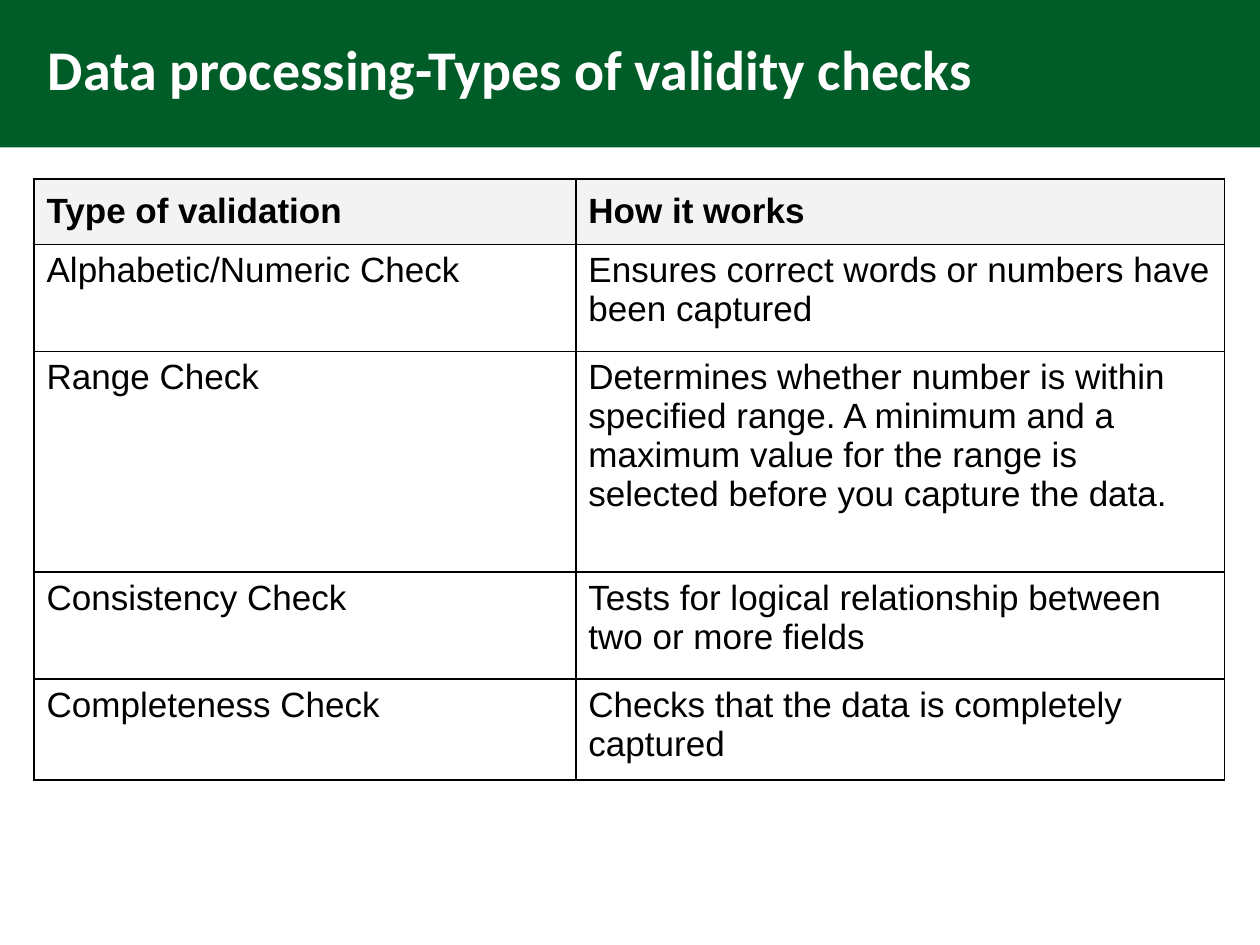
"""Build the slide on types of validity checks."""
import pptx
import pptx.dml.color
import pptx.enum.shapes
import pptx.enum.text
import pptx.oxml
import pptx.oxml.ns
import pptx.util

Inches = pptx.util.Inches
Pt = pptx.util.Pt
RGBColor = pptx.dml.color.RGBColor
Anchor = pptx.enum.text.MSO_ANCHOR

GREEN = RGBColor(0x00, 0x5D, 0x28)
GREY = RGBColor(0xF3, 0xF3, 0xF3)
BLACK = RGBColor(0x00, 0x00, 0x00)
WHITE = RGBColor(0xFF, 0xFF, 0xFF)

TITLE = "Data processing-Types of validity checks"
ROWS = [
    (0.52, "Type of validation", "How it works"),
    (0.85, "Alphabetic/Numeric Check",
     "Ensures correct words or numbers have been captured"),
    (1.75, "Range Check",
     "Determines whether number is within specified range. A minimum and a "
     "maximum value for the range is selected before you capture the data."),
    (0.85, "Consistency Check",
     "Tests for logical relationship between two or more fields"),
    (0.8, "Completeness Check", "Checks that the data is completely captured"),
]
COLUMN_WIDTHS = (4.3, 5.15)


def style_text(paragraph, name, size, color, bold):
    for span in paragraph.runs:
        span.font.name = name
        span.font.size = Pt(size)
        span.font.color.rgb = color
        span.font.bold = bold


def add_borders(cell):
    properties = cell._tc.get_or_add_tcPr()
    for index, side in enumerate(("lnL", "lnR", "lnT", "lnB")):
        border = pptx.oxml.parse_xml(
            f'<a:{side} {pptx.oxml.ns.nsdecls("a")} w="{Pt(1)}"><a:solidFill>'
            f'<a:srgbClr val="{BLACK}"/></a:solidFill></a:{side}>')
        properties.insert(index, border)


def add_heading(page):
    title = page.shapes.title
    title.left, title.top = Inches(0.28), Inches(0.09)
    title.width, title.height = Inches(8.53), Inches(0.77)
    frame = title.text_frame
    frame.text = TITLE
    frame.word_wrap = True
    frame.auto_size = pptx.enum.text.MSO_AUTO_SIZE.NONE
    frame.vertical_anchor = Anchor.BOTTOM
    paragraph = frame.paragraphs[0]
    paragraph.alignment = pptx.enum.text.PP_ALIGN.LEFT
    paragraph.line_spacing = 0.85
    style_text(paragraph, "Calibri", 32, WHITE, True)

    band = page.shapes.add_shape(
        pptx.enum.shapes.MSO_SHAPE.RECTANGLE, 0, 0, Inches(10), Inches(1.17))
    band.shadow.inherit = False
    band.fill.solid()
    band.fill.fore_color.rgb = GREEN
    band.line.fill.background()
    title.element.addprevious(band.element)


def add_checks_table(page):
    table = page.shapes.add_table(
        len(ROWS), len(COLUMN_WIDTHS), Inches(0.27), Inches(1.42),
        Inches(sum(COLUMN_WIDTHS)), Inches(sum(row[0] for row in ROWS))).table
    table.horz_banding = False
    for column, width in zip(table.columns, COLUMN_WIDTHS):
        column.width = Inches(width)
    for row_index, (height, *texts) in enumerate(ROWS):
        is_header = row_index == 0
        table.rows[row_index].height = Inches(height)
        for cell, text in zip(table.rows[row_index].cells, texts):
            cell.text_frame.text = text
            cell.vertical_anchor = Anchor.MIDDLE if is_header else Anchor.TOP
            cell.fill.solid()
            cell.fill.fore_color.rgb = GREY if is_header else WHITE
            style_text(cell.text_frame.paragraphs[0], "Arial", 20, BLACK, is_header)
            add_borders(cell)


def main():
    deck = pptx.Presentation()
    deck.slide_width, deck.slide_height = Inches(10), Inches(7.5)
    page = deck.slides.add_slide(deck.slide_layouts[5])
    add_heading(page)
    add_checks_table(page)
    deck.save("out.pptx")


if __name__ == "__main__":
    main()
